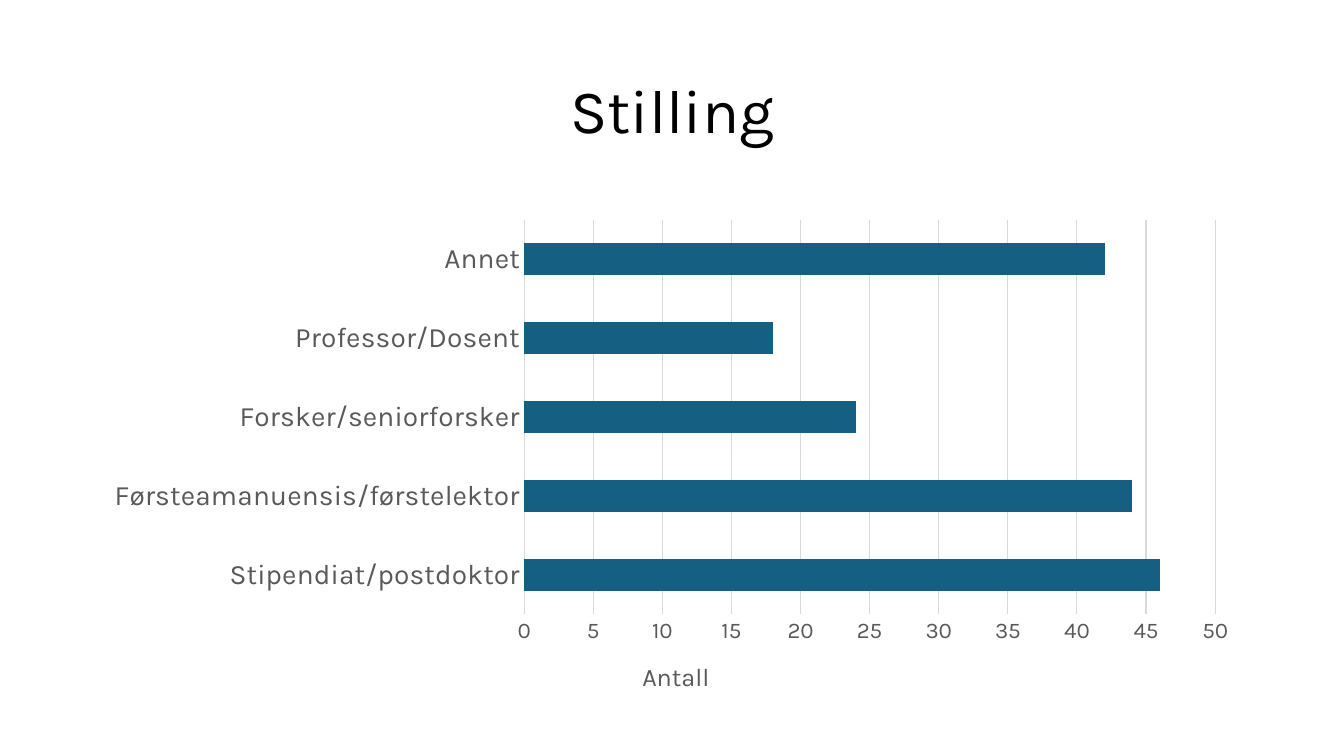
"""Build the slide "Stilling": a horizontal bar chart of respondents by position."""
import pptx
import pptx.chart.data
import pptx.dml.color
import pptx.enum.chart
import pptx.enum.text
import pptx.oxml
import pptx.oxml.ns
import pptx.util
from pptx.util import Inches

FONT = "Karla"
COLORS = {"title": "000000", "label": "595959", "grid": "D9D9D9", "bar": "156082"}
POSITIONS = {
    "Stipendiat/postdoktor": 46,
    "Førsteamanuensis/førstelektor": 44,
    "Forsker/seniorforsker": 24,
    "Professor/Dosent": 18,
    "Annet": 42,
}


def rgb(name):
    return pptx.dml.color.RGBColor.from_string(COLORS[name])


def style_font(font, size, color):
    font.name = FONT
    font.size = pptx.util.Pt(size)
    font.bold = False
    font.color.rgb = rgb(color)


def style_line(line):
    line.color.rgb = rgb("grid")
    line.width = pptx.util.Pt(0.75)


def set_layout(parent, index, **values):
    for old in parent.findall(pptx.oxml.ns.qn("c:layout")):
        parent.remove(old)
    parts = "".join(f'<c:{tag} val="{val}"/>' for tag, val in values.items())
    parent.insert(index, pptx.oxml.parse_xml(
        f'<c:layout {pptx.oxml.ns.nsdecls("c")}>'
        f"<c:manualLayout>{parts}</c:manualLayout></c:layout>"))


def add_title(s, text):
    sp = s.shapes.add_textbox(Inches(0.92), Inches(0.4), Inches(11.5), Inches(1.45))
    tf = sp.text_frame
    tf.word_wrap = True
    tf.vertical_anchor = pptx.enum.text.MSO_ANCHOR.MIDDLE
    tf.text = text
    p = tf.paragraphs[0]
    p.alignment = pptx.enum.text.PP_ALIGN.CENTER
    p.line_spacing = 0.9
    style_font(p.runs[0].font, 44, "title")


def style_axis(axis, size):
    axis.major_tick_mark = pptx.enum.chart.XL_TICK_MARK.NONE
    axis.minor_tick_mark = pptx.enum.chart.XL_TICK_MARK.NONE
    style_font(axis.tick_labels.font, size, "label")


def add_bar_chart(s, values, axis_title):
    data = pptx.chart.data.CategoryChartData()
    data.categories = list(values)
    data.add_series("Series 1", list(values.values()))
    chart = s.shapes.add_chart(
        pptx.enum.chart.XL_CHART_TYPE.BAR_STACKED,
        Inches(0.92), Inches(2.09), Inches(11.5), Inches(5.02), data).chart
    chart.has_legend = False
    chart.has_title = False
    style_font(chart.font, 10, "title")

    plot = chart.plots[0]
    plot.gap_width = 150
    plot.overlap = 100
    plot.vary_by_categories = False
    fill = plot.series[0].format.fill
    fill.solid()
    fill.fore_color.rgb = rgb("bar")

    style_axis(chart.category_axis, 20)
    style_line(chart.category_axis.format.line)

    axis = chart.value_axis
    style_axis(axis, 16)
    axis.minimum_scale, axis.maximum_scale, axis.major_unit = 0, 50, 5
    axis.format.line.fill.background()
    axis.has_major_gridlines = True
    style_line(axis.major_gridlines.format.line)
    title = axis.axis_title
    title.text_frame.text = axis_title
    style_font(title.text_frame.paragraphs[0].runs[0].font, 18, "label")

    set_layout(title._element, 1, xMode="edge", yMode="edge", x=0.47, y=0.88)
    set_layout(chart._chartSpace.chart.plotArea, 0, layoutTarget="inner",
               xMode="edge", yMode="edge", x=0.372, y=0.018, w=0.596, h=0.78)


def main():
    prs = pptx.Presentation()
    prs.slide_width, prs.slide_height = Inches(13.33), Inches(7.5)
    s = prs.slides.add_slide(prs.slide_layouts[6])
    add_title(s, "Stilling")
    add_bar_chart(s, POSITIONS, "Antall")
    prs.save("out.pptx")


if __name__ == "__main__":
    main()
